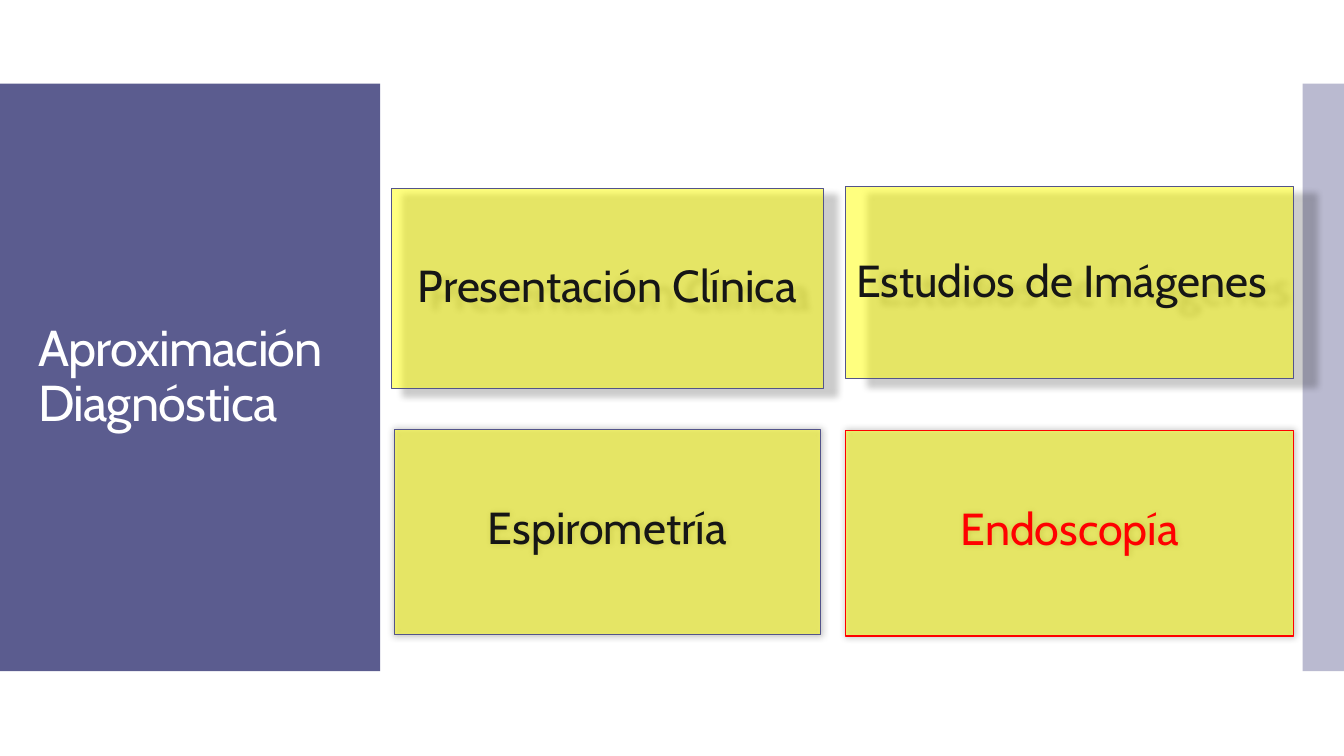
from lxml import etree
from pptx import Presentation
from pptx import util as u
from pptx.dml.color import RGBColor
from pptx.enum import shapes, text
from pptx.oxml import ns

PURPLE = RGBColor(0x53, 0x54, 0x8A)
YELLOW = RGBColor(0xFF, 0xFF, 0x00)
RED = RGBColor(0xFF, 0x00, 0x00)
WHITE = RGBColor(0xFF, 0xFF, 0xFF)
INK = RGBColor(0x16, 0x16, 0x16)
BLACK = RGBColor(0x00, 0x00, 0x00)

FRAME = {"word_wrap": True, "auto_size": text.MSO_AUTO_SIZE.NONE,
         "vertical_anchor": text.MSO_ANCHOR.MIDDLE}
CARD_FRAME = {**FRAME, "margin_left": u.Inches(0.1), "margin_right": u.Inches(0.1)}
LOWER_FRAME = {**CARD_FRAME, "margin_bottom": u.Inches(0.17)}
LEFT = {"alignment": text.PP_ALIGN.LEFT, "line_spacing": 0.9}
CENTER = {"alignment": text.PP_ALIGN.CENTER, "line_spacing": 0.9}


def apply(target, values):
    """Set every attribute in a dict of format values."""
    for name, value in values.items():
        setattr(target, name, value)


def place(shape, box):
    """Move a shape to a left, top, width, height box in inches."""
    apply(shape, dict(zip(("left", "top", "width", "height"), map(u.Inches, box))))


def set_alpha(parent, percent):
    """Give the first colour below an element an opacity."""
    color = next(parent.iter(ns.qn("a:srgbClr")))
    etree.SubElement(color, ns.qn("a:alpha"), val=str(percent * 1000))


def fill_shape(shape, color, opacity):
    """Fill a shape with a partly transparent colour."""
    shape.fill.solid()
    shape.fill.fore_color.rgb = color
    set_alpha(shape.element.spPr.find(ns.qn("a:solidFill")), opacity)


def add_shadow(shape, distance, degrees):
    """Cast a soft black shadow in the given direction."""
    shape.shadow.inherit = False
    effects = shape.element.spPr.find(ns.qn("a:effectLst"))
    shadow = etree.SubElement(effects, ns.qn("a:outerShdw"), blurRad=str(u.Pt(5)),
                              dist=str(u.Inches(distance)), dir=str(degrees * 60000),
                              algn="ctr", rotWithShape="0")
    etree.SubElement(shadow, ns.qn("a:srgbClr"), val=str(BLACK))
    set_alpha(shadow, 40)


def write(shape, wording, size, color, frame, paragraph_format):
    """Write one formatted paragraph and return its run."""
    apply(shape.text_frame, frame)
    paragraph = shape.text_frame.paragraphs[0]
    apply(paragraph, paragraph_format)
    run = paragraph.add_run()
    run.text = wording
    apply(run.font, {"name": "Cabin", "size": u.Pt(size)})
    run.font.color.rgb = color
    return run


def add_band(slide, box, opacity):
    """Add a purple side band behind the slide's text."""
    band = slide.shapes.add_shape(shapes.MSO_SHAPE.RECTANGLE, *map(u.Inches, box))
    fill_shape(band, PURPLE, opacity)
    band.line.fill.background()
    band.shadow.inherit = False
    slide.shapes.title.element.addprevious(band.element)


def add_title_panel(slide, box):
    """Build the left panel with the slide title inside it."""
    left, top, width, height = box
    add_band(slide, box, 95)
    title = slide.shapes.title
    place(title, (left + 0.28, top + 0.4, width - 0.55, height - 0.8))
    run = write(title, "Aproximación Diagnóstica", 36, WHITE, FRAME, LEFT)
    run.font._element.set("spc", "-60")


def format_card(card, box, wording, color, line_color, frame, paragraph_format, shadow):
    """Turn a shape into a yellow card with a caption."""
    place(card, box)
    fill_shape(card, YELLOW, 50)
    card.line.color.rgb = line_color
    card.line.width = u.Pt(0.75)
    add_shadow(card, *shadow)
    write(card, wording, 32, color, frame, paragraph_format)


def add_upper_card(slide, index, box, wording, paragraph_format, shadow):
    """Format a body placeholder as an unbulleted card."""
    card = slide.placeholders[index]
    format_card(card, box, wording, INK, PURPLE, CARD_FRAME,
                {**paragraph_format, "space_before": u.Pt(12)}, shadow)
    properties = card.text_frame.paragraphs[0]._p.get_or_add_pPr()
    apply_indent = {"marL": "0", "indent": "0"}
    for name, value in apply_indent.items():
        properties.set(name, value)
    etree.SubElement(properties, ns.qn("a:buNone"))


def add_lower_card(slide, box, wording, color, line_color):
    """Add a card below the placeholders."""
    card = slide.shapes.add_shape(shapes.MSO_SHAPE.RECTANGLE, *map(u.Inches, box))
    format_card(card, box, wording, color, line_color, LOWER_FRAME,
                {**CENTER, "line_spacing": 1.0}, (0, 0))


def main():
    """Build and save the presentation."""
    presentation = Presentation()
    apply(presentation, {"slide_width": u.Inches(13.33), "slide_height": u.Inches(7.5)})
    slide = presentation.slides.add_slide(presentation.slide_layouts[3])
    add_title_panel(slide, (0, 0.83, 3.77, 5.83))
    add_band(slide, (12.92, 0.83, 0.41, 5.83), 40)
    add_upper_card(slide, 1, (3.88, 1.87, 4.29, 1.98), "Presentación Clínica",
                   CENTER, (0.14, 30))
    add_upper_card(slide, 2, (8.39, 1.85, 4.44, 1.91), "Estudios de Imágenes",
                   LEFT, (0.23, 18))
    add_lower_card(slide, (3.91, 4.26, 4.23, 2.04), "Espirometría", INK, PURPLE)
    add_lower_card(slide, (8.39, 4.27, 4.44, 2.04), "Endoscopía", RED, RED)
    presentation.save("out.pptx")


if __name__ == "__main__":
    main()
